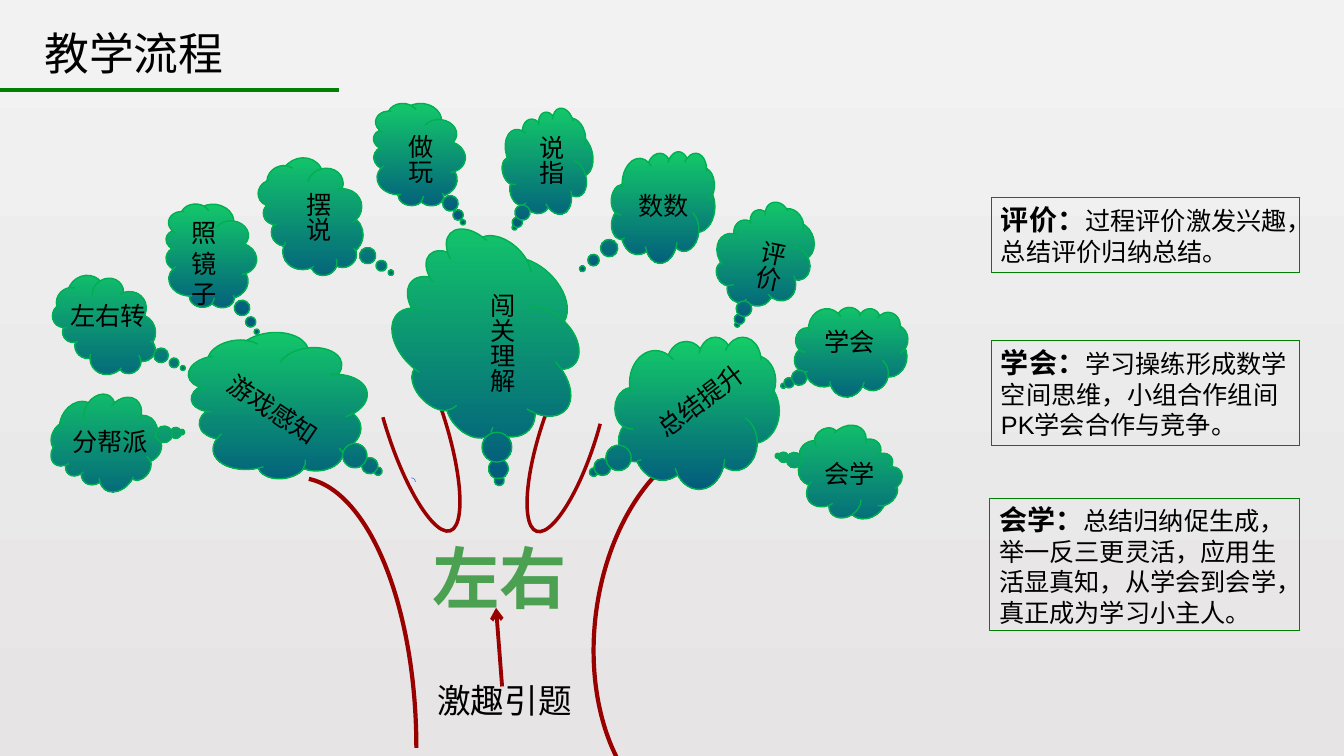
"""Build the teaching-flow slide: a tree of cloud callouts with three notes."""
from lxml import etree
from pptx import Presentation
from pptx.dml.color import RGBColor
from pptx.enum.dml import MSO_LINE
from pptx.enum.shapes import MSO_CONNECTOR, MSO_SHAPE
from pptx.enum.text import MSO_ANCHOR, MSO_AUTO_SIZE, PP_ALIGN
from pptx.oxml.ns import qn
from pptx.util import Pt

PX = 9144
LEFT, CENTER = PP_ALIGN.LEFT, PP_ALIGN.CENTER
TOP = MSO_ANCHOR.TOP
GROW, FIXED = MSO_AUTO_SIZE.SHAPE_TO_FIT_TEXT, MSO_AUTO_SIZE.NONE
ARC, CLOUD, RECT = MSO_SHAPE.ARC, MSO_SHAPE.CLOUD_CALLOUT, MSO_SHAPE.RECTANGLE
STRAIGHT = MSO_CONNECTOR.STRAIGHT
DOTTED = MSO_LINE.ROUND_DOT

BLACK = RGBColor(0, 0, 0)
BARK = RGBColor(0x99, 0, 0)
RULE_GREEN = RGBColor(0, 0x80, 0)
TOPIC_GREEN = RGBColor(0x4B, 0xA1, 0x51)
CLOUD_EDGE = RGBColor(0, 0xB0, 0x50)
CLOUD_TOP = RGBColor(0x14, 0xCD, 0x68)
CLOUD_BOTTOM = RGBColor(0x03, 0x5C, 0x7D)
PAGE_TOP = RGBColor(0xF2, 0xF2, 0xF2)
PAGE_BOTTOM = RGBColor(0xE6, 0xE4, 0xE4)
SPECK_BLUE = RGBColor(0x47, 0x7D, 0xEA)
LATIN, HAN = "Arial", "Noto Sans CJK SC"

BRANCHES = [
    ((178, 474, 235, 536), 0, (163.4, 0), BARK, 3),
    ((590, 432, 248, 385), 187, (180.93, 39.72), BARK, 3),
    ((404, 474, 8, 8), 0, (162, 0), SPECK_BLUE, 0.5),
    ((383, 309, 58, 223), 162, (94.41, 17.71), BARK, 2.5),
    ((536, 330, 55, 202), 198, (86.15, 17.71), BARK, 2.5),
]
TAIL = (-0.53, 0.51)
CLOUDS = [
    ((397, 235, 177, 204), 314, TAIL),
    ((205, 315, 145, 174), 263, TAIL),
    ((610, 334, 163, 151), 0, (-0.63, 0.39)),
    ((498, 112, 91, 102), 345, TAIL),
    ((252, 166, 119, 97), 255, (-0.62, 0.61)),
    ((364, 107, 102, 93), 277, (-0.6, 0.56)),
    ((606, 149, 103, 112), 5, (-0.72, 0.61)),
    ((55, 388, 103, 99), 216, TAIL),
    ((52, 278, 109, 87), 237, (-0.71, 0.45)),
    ((157, 208, 103, 92), 278, (-0.66, 0.61)),
    ((790, 424, 100, 92), 56, TAIL),
    ((788, 303, 112, 91), 11, TAIL),
    ((708, 209, 103, 93), 334, TAIL),
]
LABELS = [
    ("总结提升", (635, 377, 120, 40), 323),
    ("游戏感知", (211, 386, 120, 40), 34),
    ("会学", (808, 450, 70, 40), 0),
    ("学会", (808, 319, 70, 40), 0),
    ("左右转", (60, 293, 96, 40), 0),
    ("分帮派", (62, 418, 95, 40), 0),
    ("数数", (623, 184, 70, 40), 0),
]
VERTICAL_LABELS = [
    ("闯关理解", (468, 281, 50, 110), 0),
    ("评价", (735, 228, 50, 60), 12),
    ("摆说", (286, 181, 50, 60), 0),
    ("做玩", (387, 123, 50, 60), 0),
    ("说指", (517, 124, 50, 60), 0),
]
MIRROR = ("照镜子", (180, 211, 65, 100))
TITLE = ("教学流程", (34, 21, 291, 63))
TOPIC = ("左右", (399, 527, 193, 89))
LEAD_IN = ("激趣引题", (424, 670, 153, 50))
TITLE_RULE = (0, 89, 336, 89)
LEAD_ARROW = (498, 681, 492, 603)
NOTES = [
    ("评价：", "过程评价激发兴趣，总结评价归纳总结。", (983, 196, 306, 74), LATIN),
    ("学会：", "学习操练形成数学空间思维，小组合作组间PK学会合作与竞争。",
     (983, 338, 306, 104), LATIN),
    ("会学：", "总结归纳促生成，举一反三更灵活，应用生活显真知，从学会到会学，真正成为学习小主人。",
     (981, 494, 308, 131), HAN),
]


def emu(box):
    return [v * PX for v in box]


def blend(fill, top, bottom):
    fill.gradient()
    fill.gradient_angle = 270
    for stop, color, position in zip(fill.gradient_stops, (top, bottom), (0, 1)):
        stop.color.rgb = color
        stop.position = position


def add_outline(s, kind, box, color, width, rotation=0, adjustments=()):
    sp = s.shapes.add_shape(kind, *emu(box))
    sp.shadow.inherit = False
    sp.rotation = rotation
    for i, value in enumerate(adjustments):
        sp.adjustments[i] = value
    sp.fill.background()
    sp.line.color.rgb = color
    sp.line.width = Pt(width)
    return sp


def add_cloud(s, box, rotation, tail):
    sp = add_outline(s, CLOUD, box, CLOUD_EDGE, 1, rotation, tail)
    blend(sp.fill, CLOUD_TOP, CLOUD_BOTTOM)
    sp.element.spPr.find(qn("a:gradFill")).set("rotWithShape", "0")


def add_run(p, text, size, font=LATIN, color=BLACK, bold=False):
    r = p.add_run()
    r.text = text
    r.font.size = Pt(size)
    r.font.name = font
    r.font.bold = bold
    r.font.color.rgb = color
    etree.SubElement(r.font._element, qn("a:ea")).set("typeface", HAN)


def add_text(s, text, box, rotation=0, size=18, wrap=False, vertical=False,
             align=LEFT, **style):
    sp = s.shapes.add_textbox(*emu(box))
    sp.rotation = rotation
    tf = sp.text_frame
    tf.word_wrap = wrap
    tf.auto_size = GROW
    if vertical:
        tf._txBody.bodyPr.set("vert", "eaVert")
    p = tf.paragraphs[0]
    p.alignment = align
    add_run(p, text, size, **style)


def add_note(s, heading, body, box, font):
    sp = add_outline(s, RECT, box, RULE_GREEN, 0.25)
    sp.line.dash_style = DOTTED
    tf = sp.text_frame
    tf.word_wrap = True
    tf.auto_size = FIXED
    tf.vertical_anchor = TOP
    p = tf.paragraphs[0]
    p.alignment = LEFT
    add_run(p, heading, 20, font, bold=True)
    add_run(p, body, 18, font)


def add_line(s, ends, color, arrow=False):
    line = s.shapes.add_connector(STRAIGHT, *emu(ends))
    line.line.color.rgb = color
    line.line.width = Pt(2.75)
    if arrow:
        etree.SubElement(line.line._get_or_add_ln(), qn("a:tailEnd")).set("type", "arrow")
    etree.SubElement(line.element.spPr, qn("a:effectLst"))


def main():
    prs = Presentation()
    prs.slide_width, prs.slide_height = emu((1333, 750))
    s = prs.slides.add_slide(prs.slide_layouts[6])
    blend(s.background.fill, PAGE_TOP, PAGE_BOTTOM)
    for box, rotation, angles, color, width in BRANCHES:
        add_outline(s, ARC, box, color, width, rotation, angles)
    for cloud in CLOUDS:
        add_cloud(s, *cloud)
    for label in LABELS:
        add_text(s, *label)
    for label in VERTICAL_LABELS:
        add_text(s, *label, vertical=True)
    add_text(s, *MIRROR, wrap=True)
    add_text(s, *TOPIC, size=48, wrap=True, align=CENTER, color=TOPIC_GREEN, bold=True)
    add_text(s, *LEAD_IN, size=24)
    add_line(s, LEAD_ARROW, BARK, arrow=True)
    add_text(s, *TITLE, size=32, wrap=True, font=HAN)
    add_line(s, TITLE_RULE, RULE_GREEN)
    for note in NOTES:
        add_note(s, *note)
    prs.save("out.pptx")


if __name__ == "__main__":
    main()
